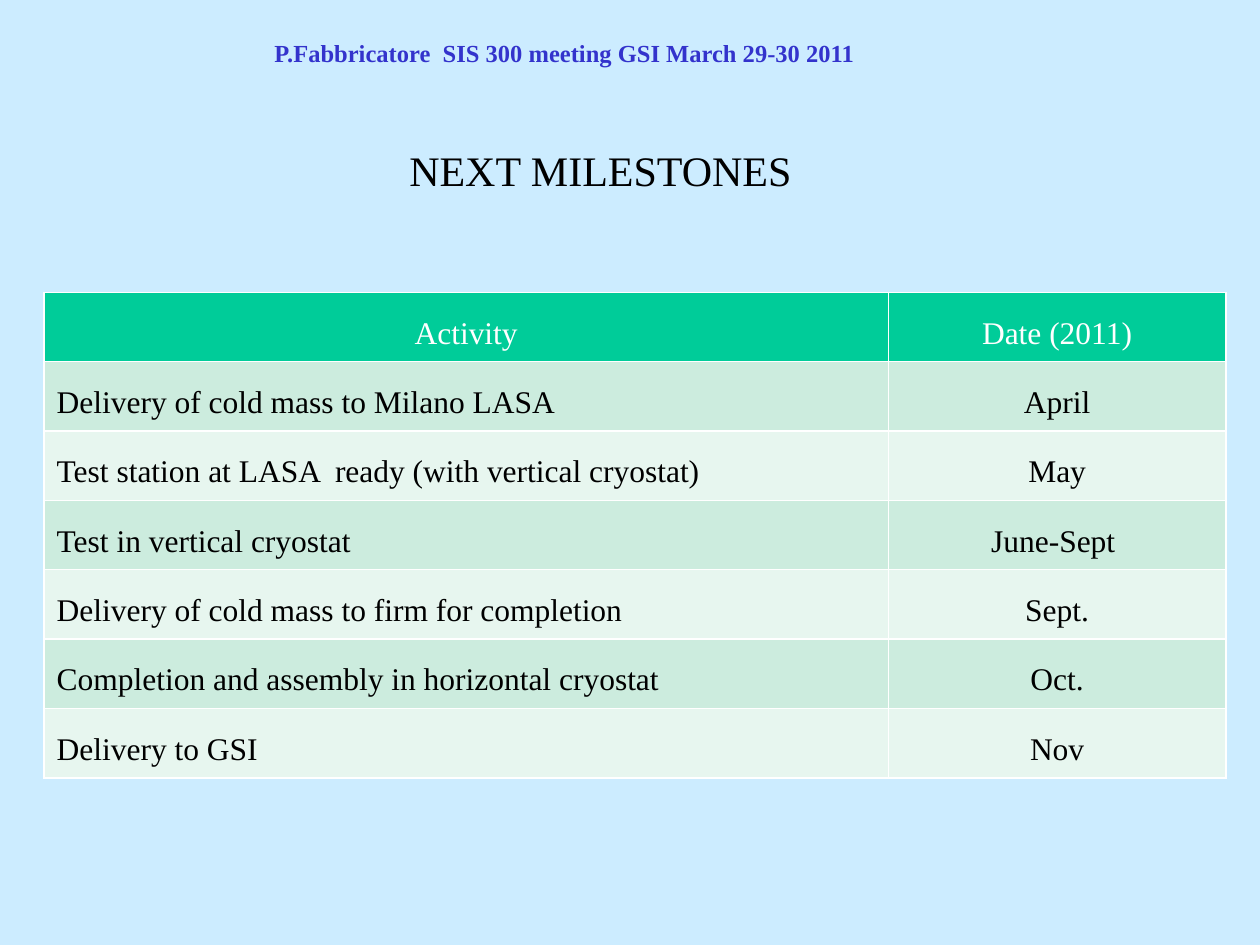
from lxml import etree
from pptx import Presentation
from pptx.dml.color import RGBColor
from pptx.enum.text import PP_ALIGN
from pptx.oxml.ns import qn
from pptx.util import Inches, Pt

LEFT, CENTER = PP_ALIGN.LEFT, PP_ALIGN.CENTER
FONT = "Times New Roman"
HEADER_FILL = "00CC99"
BAND_FILLS = ["E7F6EF", "CCECDE"]
MILESTONES = [
    ("Activity", "Date (2011)"),
    ("Delivery of cold mass to Milano LASA", "April"),
    ("Test station at LASA  ready (with vertical cryostat)", "May"),
    ("Test in vertical cryostat", "June-Sept "),
    ("Delivery of cold mass to firm for completion", "Sept."),
    ("Completion and assembly in horizontal cryostat", "Oct."),
    ("Delivery to GSI", "Nov"),
]


def rgb(color):
    return RGBColor.from_string(color)


def write(frame, text, size, color, bold=False):
    frame.word_wrap = True
    paragraph = frame.paragraphs[0]
    paragraph.text = text
    font = paragraph.font
    font.name, font.size, font.bold = FONT, Pt(size), bold
    font.color.rgb = rgb(color)
    return paragraph


prs = Presentation()
prs.slide_width, prs.slide_height = Inches(10), Inches(7.5)
slide = prs.slides.add_slide(prs.slide_layouts[6])
slide.background.fill.solid()
slide.background.fill.fore_color.rgb = rgb("CCECFF")

meeting = slide.shapes.add_textbox(Inches(2.08), Inches(0.25), Inches(6.08), Inches(0.33))
write(meeting.text_frame, "P.Fabbricatore  SIS 300 meeting GSI March 29-30 2011", 14, "3333CC", True)

# Milestone table
row_height = Inches(0.55)
schedule = slide.shapes.add_table(
    len(MILESTONES), 2, Inches(0.35), Inches(2.32), Inches(9.38), row_height * len(MILESTONES)
).table
schedule.columns[0].width = Inches(6.7)
schedule.columns[1].width = Inches(2.68)

for row, entries in enumerate(MILESTONES):
    schedule.rows[row].height = row_height
    is_header = row == 0
    for column, entry in enumerate(entries):
        cell = schedule.cell(row, column)
        paragraph = write(cell.text_frame, entry, 18, "FFFFFF" if is_header else "000000")
        paragraph.line_spacing = 1.5
        paragraph.alignment = CENTER if is_header or column == 1 else LEFT

        properties = cell._tc.get_or_add_tcPr()
        for side in ("a:lnL", "a:lnR", "a:lnT", "a:lnB"):
            border = etree.SubElement(properties, qn(side), w=str(Pt(1)))
            border_fill = etree.SubElement(border, qn("a:solidFill"))
            etree.SubElement(border_fill, qn("a:srgbClr"), val="FFFFFF")
        cell.fill.solid()
        cell.fill.fore_color.rgb = rgb(HEADER_FILL if is_header else BAND_FILLS[row % 2])

title = slide.shapes.add_textbox(Inches(3.15), Inches(1.1), Inches(3.53), Inches(0.51))
write(title.text_frame, "NEXT MILESTONES", 24, "000000")

prs.save("out.pptx")
